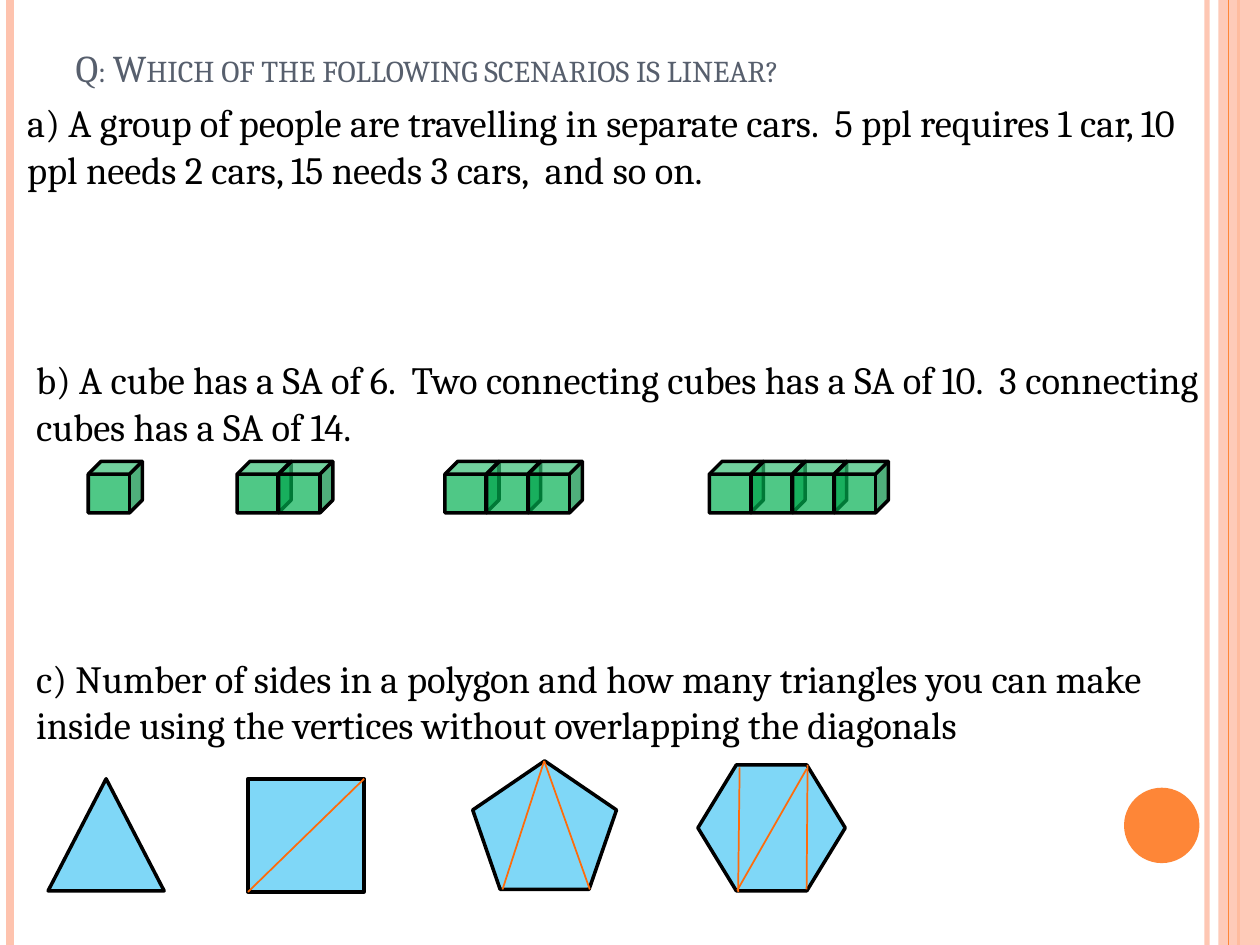
"""Build a slide asking which of three scenarios is linear."""
import pptx
import pptx.dml.color
import pptx.enum.shapes
import pptx.enum.text
import pptx.oxml
import pptx.oxml.ns
import pptx.util

Cm, Pt = pptx.util.Cm, pptx.util.Pt
SHAPES = pptx.enum.shapes.MSO_SHAPE

THEME = {
    "font": "Cambria", "title_size": 21.6, "body_size": 22,
    "title": "575F6D", "text": "000000", "outline": "000000",
    "orange": "FE8637", "peach": "FEC3AE", "diagonal": "FF6B0A",
    "cube": "00B050", "polygon": "00B0F0",
}

PAGE_WIDTH, PAGE_HEIGHT = 25.4, 19.05
TITLE = "Q: Which of the following scenarios is linear?"
SCENARIOS = [
    (0.3, 1.88, "a) A group of people are travelling in separate cars.  5 ppl requires 1 car, "
                "10 ppl needs 2 cars, 15 needs 3 cars,  and so on."),
    (0.48, 7.06, "b) A cube has a SA of 6.  Two connecting cubes has a SA of 10.  "
                 "3 connecting cubes has a SA of 14."),
    (0.48, 13.08, "c) Number of sides in a polygon and how many triangles you can make inside "
                  "using the vertices without overlapping the diagonals"),
]
BACK_RULES = [(24.33, "peach", 3, 93), (0.2, "peach", 4.5, 100), (24.97, "orange", 1.5, 100)]
FRONT_RULE = (24.77, "orange", 0.75, 100)
BAND = (24.56, 0, 0.84, PAGE_HEIGHT)
DOT = (22.66, 15.88, 1.52, 1.52)

CUBE_ROW_LEFTS = [1.78, 4.78, 8.97, 14.3]
CUBE_TOP, CUBE_WIDTH, CUBE_HEIGHT, CUBE_PITCH = 9.3, 1.09, 1.04, 0.84

POLYGONS = [
    (SHAPES.ISOSCELES_TRIANGLE, (0.97, 15.7, 2.34, 2.26)),
    (SHAPES.RECTANGLE, (5, 15.7, 2.34, 2.28)),
    (SHAPES.REGULAR_PENTAGON, (9.53, 15.34, 2.9, 2.59)),
    (SHAPES.HEXAGON, (14.07, 15.42, 2.97, 2.54)),
]
HEXAGON_ADJUSTMENT = 0.305
DIAGONALS = [
    (5, 17.98, 7.34, 15.7),
    (10.13, 17.93, 10.97, 15.34),
    (11.89, 17.93, 10.97, 15.34),
    (16.26, 17.93, 16.28, 15.42),
    (14.86, 17.95, 16.26, 15.5),
    (14.88, 17.98, 14.91, 15.47),
]


def color(name):
    return pptx.dml.color.RGBColor.from_string(THEME[name])


def set_opacity(element, percent):
    if percent < 100:
        tint = next(element.iter(pptx.oxml.ns.qn("a:srgbClr")))
        alpha = pptx.oxml.parse_xml(f'<a:alpha {pptx.oxml.ns.nsdecls("a")} val="{percent * 1000}"/>')
        tint.append(alpha)


def add_line(page, ends, name, width, opacity=100):
    line = page.shapes.add_connector(
        pptx.enum.shapes.MSO_CONNECTOR.STRAIGHT, *(Cm(value) for value in ends))
    line.line.color.rgb = color(name)
    line.line.width = Pt(width)
    properties = line._element.spPr
    set_opacity(properties, opacity)
    properties.append(pptx.oxml.parse_xml(f'<a:effectLst {pptx.oxml.ns.nsdecls("a")}/>'))


def add_rule(page, left, name, width, opacity):
    add_line(page, (left, 0, left, PAGE_HEIGHT), name, width, opacity)


def add_figure(page, kind, place, name, opacity=100, outline=0):
    figure = page.shapes.add_shape(kind, *(Cm(value) for value in place))
    figure.shadow.inherit = False
    figure.fill.solid()
    figure.fill.fore_color.rgb = color(name)
    set_opacity(figure._element.spPr, opacity)
    if outline:
        figure.line.color.rgb = color("outline")
        figure.line.width = Pt(outline)
    else:
        figure.line.fill.background()
    return figure


def write(box, text, name, size):
    frame = box.text_frame
    frame.word_wrap = True
    frame.auto_size = pptx.enum.text.MSO_AUTO_SIZE.NONE
    para = frame.paragraphs[0]
    para.alignment = pptx.enum.text.PP_ALIGN.LEFT
    para.font.name = THEME["font"]
    para.font.size = Pt(size)
    para.font.color.rgb = color(name)
    span = para.add_run()
    span.text = text
    return para, span


def add_title(page):
    box = page.shapes.title
    box.left, box.top, box.width, box.height = Cm(1.27), Cm(0.76), Cm(20.75), Cm(1.19)
    _, span = write(box, TITLE, "title", THEME["title_size"])
    span._r.get_or_add_rPr().set("cap", "small")
    box.text_frame.vertical_anchor = pptx.enum.text.MSO_ANCHOR.BOTTOM


def add_frame(page):
    for rule in BACK_RULES:
        add_rule(page, *rule)
    add_figure(page, SHAPES.RECTANGLE, BAND, "peach", 87)
    add_rule(page, *FRONT_RULE)
    add_figure(page, SHAPES.OVAL, DOT, "orange")


def add_scenarios(page):
    for left, top, text in SCENARIOS:
        box = page.shapes.add_textbox(Cm(left), Cm(top), Cm(24.03), Cm(2.26))
        para, _ = write(box, text, "text", THEME["body_size"])
        para.space_before = Pt(6)


def add_cubes(page):
    for count, start in enumerate(CUBE_ROW_LEFTS, 1):
        for index in range(count):
            place = (start + index * CUBE_PITCH, CUBE_TOP, CUBE_WIDTH, CUBE_HEIGHT)
            add_figure(page, SHAPES.CUBE, place, "cube", 69, 2)


def add_polygons(page):
    for kind, place in POLYGONS:
        polygon = add_figure(page, kind, place, "polygon", 50, 2)
        if kind == SHAPES.HEXAGON:
            polygon.adjustments[0] = HEXAGON_ADJUSTMENT
    for ends in DIAGONALS:
        add_line(page, ends, "diagonal", 1)


def main():
    deck = pptx.Presentation()
    deck.slide_width, deck.slide_height = Cm(PAGE_WIDTH), Cm(PAGE_HEIGHT)
    page = deck.slides.add_slide(deck.slide_layouts.get_by_name("Title Only"))
    add_frame(page)
    add_title(page)
    add_scenarios(page)
    add_cubes(page)
    add_polygons(page)
    deck.save("out.pptx")


if __name__ == "__main__":
    main()
